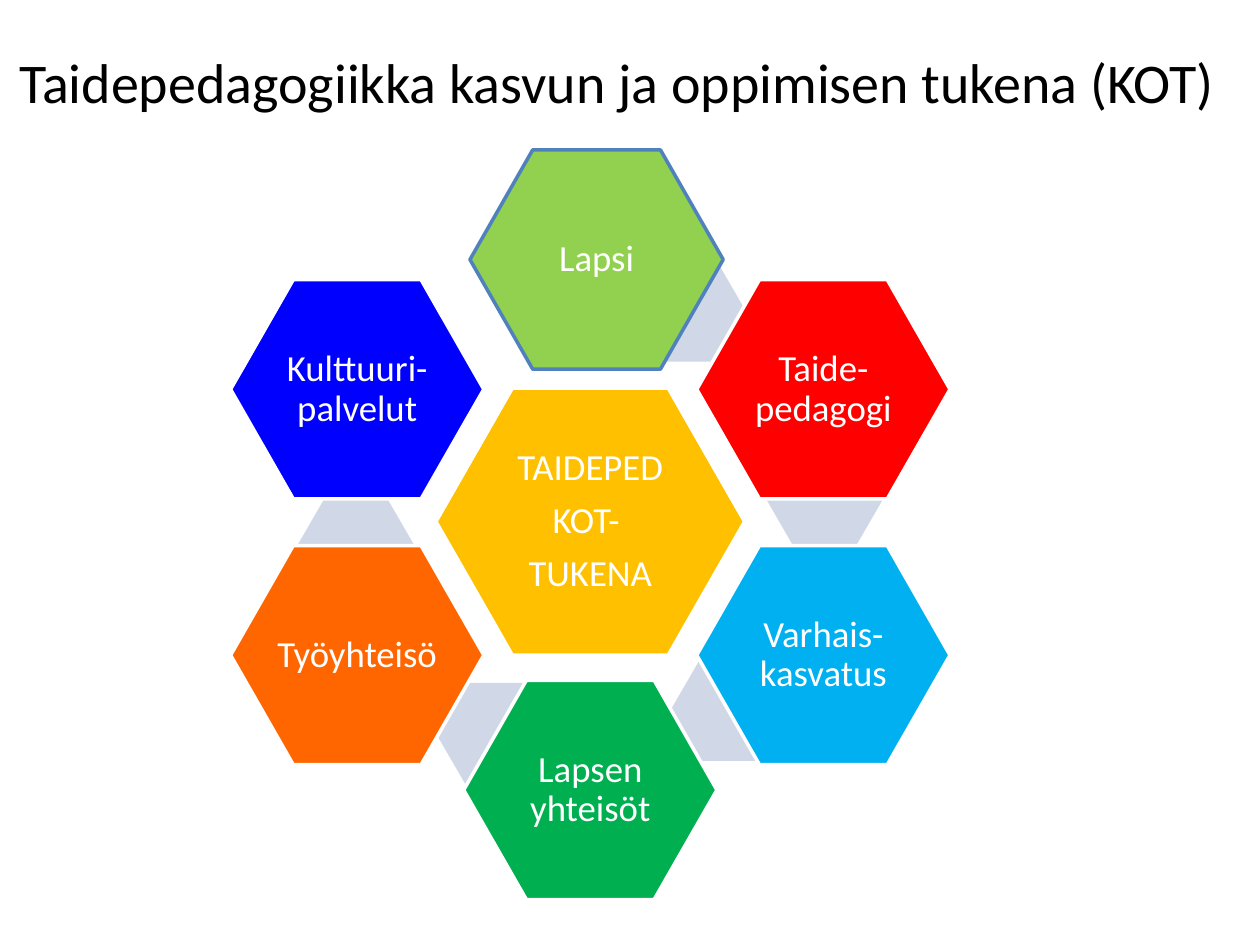
from pptx import Presentation
from pptx.dml.color import RGBColor as RGB
from pptx.enum.shapes import MSO_SHAPE as Shape
from pptx.enum.text import MSO_ANCHOR as Anchor, PP_ALIGN as Align
from pptx.util import Inches, Pt

INK = {
    "black": "000000", "white": "FFFFFF", "link": "D0D8E8", "edge": "4F81BD",
    "gold": "FFC000", "lime": "92D050", "red": "FF0000", "sky": "00B0F0",
    "green": "00B050", "orange": "FF6600", "blue": "0000FF",
}
CELL = (2.01, 1.74)
LINK = (0.93, 0.8)
RING = [
    ("Lapsi", "lime", "edge", (1.9, 0), (3.16, 0.88)),
    ("Taide-pedagogi", "red", "white", (3.7, 1.03), (4.25, 2.37)),
    ("Varhais-kasvatus", "sky", "white", (3.7, 3.14), (3.49, 4.05)),
    ("Lapsen yhteisöt", "green", "white", (1.85, 4.21), (1.63, 4.23)),
    ("Työyhteisö", "orange", "white", (0, 3.14), (0.53, 2.74)),
    ("Kulttuuri-palvelut", "blue", "white", (0, 1.03), None),
]


def color(name):
    """Look up a named colour."""
    return RGB.from_string(INK[name])


def write(frame, text, size=21, ink="white", inset=0.03, lead=0.9, after=7.35):
    """Fill a text frame with centred lines."""
    frame.word_wrap = True
    frame.vertical_anchor = Anchor.MIDDLE
    frame.margin_left = frame.margin_right = Inches(inset)
    frame.margin_top = frame.margin_bottom = Inches(inset)
    for num, line in enumerate(text.split("\n")):
        para = frame.add_paragraph() if num else frame.paragraphs[0]
        para.alignment = Align.CENTER
        para.line_spacing = lead
        para.space_after = Pt(after)
        run = para.add_run()
        run.text = line
        run.font.name = "Calibri"
        run.font.size = Pt(size)
        run.font.color.rgb = color(ink)


def hexagon(slide, left, top, size, fill, edge=None, text=None, adj=0.286):
    """Draw one hexagon with an optional outline and label."""
    box = [Inches(v) for v in (left, top, *size)]
    cell = slide.shapes.add_shape(Shape.HEXAGON, *box)
    cell.shadow.inherit = False
    cell.adjustments[0] = adj
    cell.fill.solid()
    cell.fill.fore_color.rgb = color(fill)
    if edge:
        cell.line.color.rgb = color(edge)
        cell.line.width = Pt(2)
    else:
        cell.line.fill.background()
    if text:
        write(cell.text_frame, text)


def title(slide, left, top, width, height):
    """Place the slide heading."""
    box = [Inches(v) for v in (left, top, width, height)]
    frame = slide.shapes.add_textbox(*box).text_frame
    write(frame, "Taidepedagogiikka kasvun ja oppimisen tukena (KOT)",
          size=32, ink="black", inset=0.05, lead=1, after=0)


def wheel(slide, left, top):
    """Place the core hexagon and the ring of linked cells around it."""
    hexagon(slide, left + 1.63, top + 1.89, (2.45, 2.12), "gold", "white",
            "TAIDEPED\nKOT- \nTUKENA")
    for text, fill, edge, (x, y), link in RING:
        if link:
            hexagon(slide, left + link[0], top + link[1], LINK, "link", adj=0.289)
        hexagon(slide, left + x, top + y, CELL, fill, edge, text)


def main():
    """Build and save the deck."""
    deck = Presentation()
    deck.slide_width, deck.slide_height = Inches(10), Inches(7.5)
    slide = deck.slides.add_slide(deck.slide_layouts[6])
    title(slide, 0, 0.3, 9.8, 0.69)
    wheel(slide, 1.83, 1.19)
    deck.save("out.pptx")


if __name__ == "__main__":
    main()
